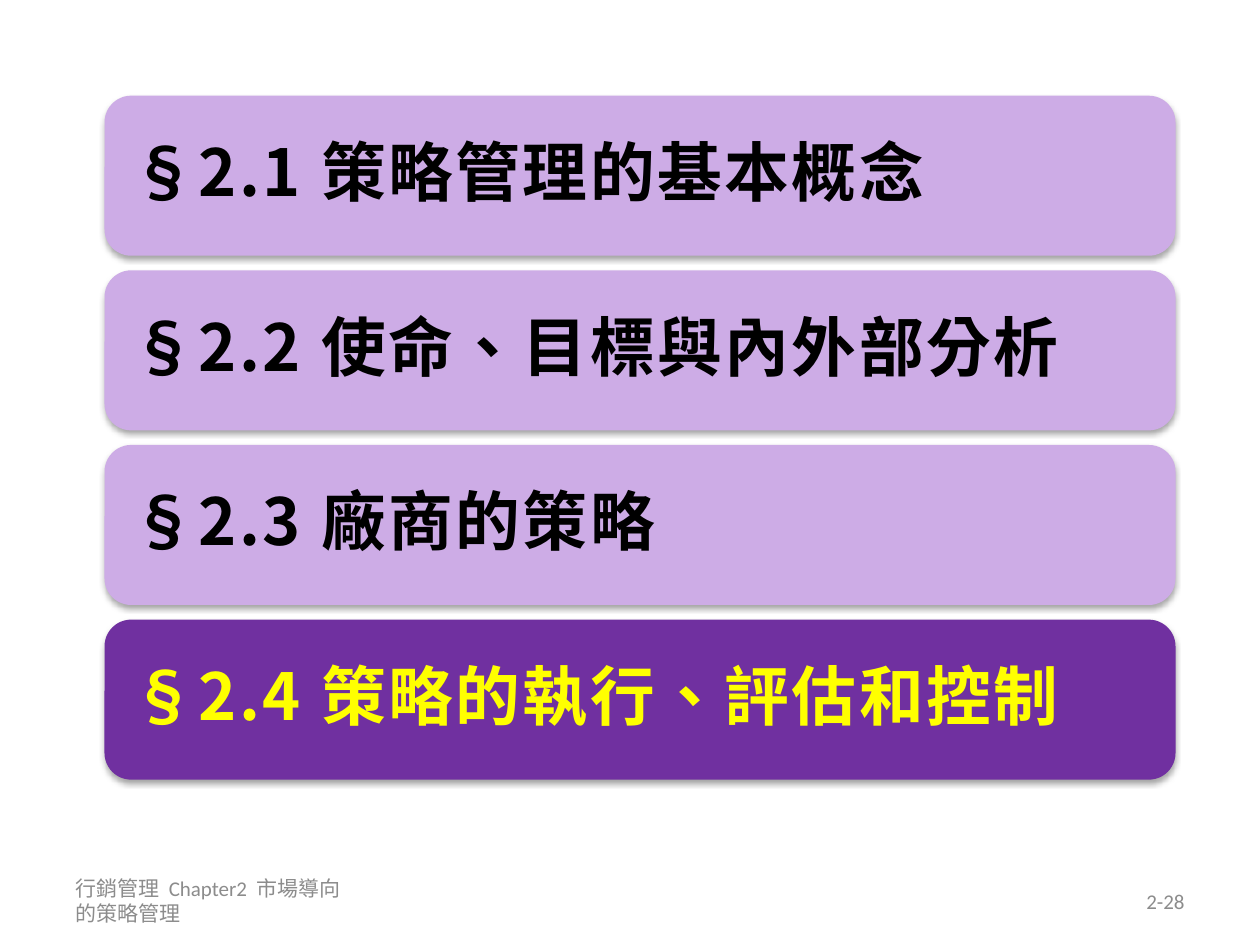
from dataclasses import dataclass

from lxml.etree import SubElement
from pptx import Presentation
from pptx.dml.color import RGBColor
from pptx.enum.shapes import MSO_SHAPE as Preset
from pptx.enum.text import MSO_ANCHOR as Anchor, PP_ALIGN as Align
from pptx.oxml.ns import qn
from pptx.util import Inches, Pt


@dataclass(frozen=True)
class Theme:
    heading_font: str = "Noto Sans CJK SC"
    footer_font: str = "Calibri"
    heading_size: float = 37
    footer_size: float = 12
    letter_spacing: int = 150
    idle_fill: str = "CDACE6"
    idle_text: str = "000000"
    active_fill: str = "7030A0"
    active_text: str = "FFFF00"
    footer_text: str = "8C8C8C"
    shadow: str = "000000"


THEME = Theme()

SECTIONS = [
    "§2.1 策略管理的基本概念",
    "§2.2 使命、目標與內外部分析",
    "§2.3 廠商的策略",
    "§2.4 策略的執行、評估和控制",
]
CURRENT_SECTION = 3

BAR_LEFT, BAR_TOP = 0.83, 0.76
BAR_WIDTH, BAR_HEIGHT = 8.5, 1.27
BAR_PITCH = 1.386
BAR_INSET = 0.15


def style_text(paragraph, font_name, size, color, bold=False):
    run = paragraph.runs[0]
    run.font.name = font_name
    run.font.size = Pt(size)
    run.font.bold = bold
    run.font.color.rgb = RGBColor.from_string(color)
    properties = run._r.get_or_add_rPr()
    properties.set("lang", "zh-TW")
    return properties


def add_soft_shadow(bar):
    bar.shadow.inherit = False
    effects = bar._element.spPr.find(qn("a:effectLst"))
    shadow = SubElement(
        effects, qn("a:outerShdw"), blurRad=str(Pt(3.1)), dist=str(Pt(1.8)),
        dir="5400000", algn="ctr", rotWithShape="0",
    )
    color = SubElement(shadow, qn("a:srgbClr"), val=THEME.shadow)
    SubElement(color, qn("a:alpha"), val="35000")


def add_section_bar(slide, index, title):
    is_current = index == CURRENT_SECTION
    bar = slide.shapes.add_shape(
        Preset.ROUNDED_RECTANGLE,
        Inches(BAR_LEFT), Inches(BAR_TOP + index * BAR_PITCH),
        Inches(BAR_WIDTH), Inches(BAR_HEIGHT),
    )
    bar.fill.solid()
    bar.fill.fore_color.rgb = RGBColor.from_string(
        THEME.active_fill if is_current else THEME.idle_fill
    )
    bar.line.fill.background()
    add_soft_shadow(bar)

    frame = bar.text_frame
    frame.word_wrap = True
    frame.vertical_anchor = Anchor.MIDDLE
    frame.margin_left = frame.margin_right = Inches(BAR_INSET)
    frame.margin_top = frame.margin_bottom = Inches(BAR_INSET)
    frame.text = title
    heading = frame.paragraphs[0]
    heading.alignment = Align.LEFT
    heading.line_spacing = 0.9
    heading.space_after = Pt(13)
    properties = style_text(
        heading, THEME.heading_font, THEME.heading_size,
        THEME.active_text if is_current else THEME.idle_text, bold=True,
    )
    properties.set("spc", str(THEME.letter_spacing))
    SubElement(properties, qn("a:ea"), typeface=THEME.heading_font)


def add_footer(slide, left, text, alignment):
    footer = slide.shapes.add_textbox(
        Inches(left), Inches(6.95), Inches(2.33), Inches(0.4)
    )
    frame = footer.text_frame
    frame.word_wrap = True
    frame.vertical_anchor = Anchor.MIDDLE
    frame.text = text
    line = frame.paragraphs[0]
    line.alignment = alignment
    style_text(line, THEME.footer_font, THEME.footer_size, THEME.footer_text)


def main():
    deck = Presentation()
    deck.slide_width, deck.slide_height = Inches(10), Inches(7.5)
    slide = deck.slides.add_slide(deck.slide_layouts[6])
    add_footer(slide, 0.5, "行銷管理  Chapter2  市場導向的策略管理", Align.LEFT)
    add_footer(slide, 7.17, "2-28", Align.RIGHT)
    for index, title in enumerate(SECTIONS):
        add_section_bar(slide, index, title)
    deck.save("out.pptx")


if __name__ == "__main__":
    main()
